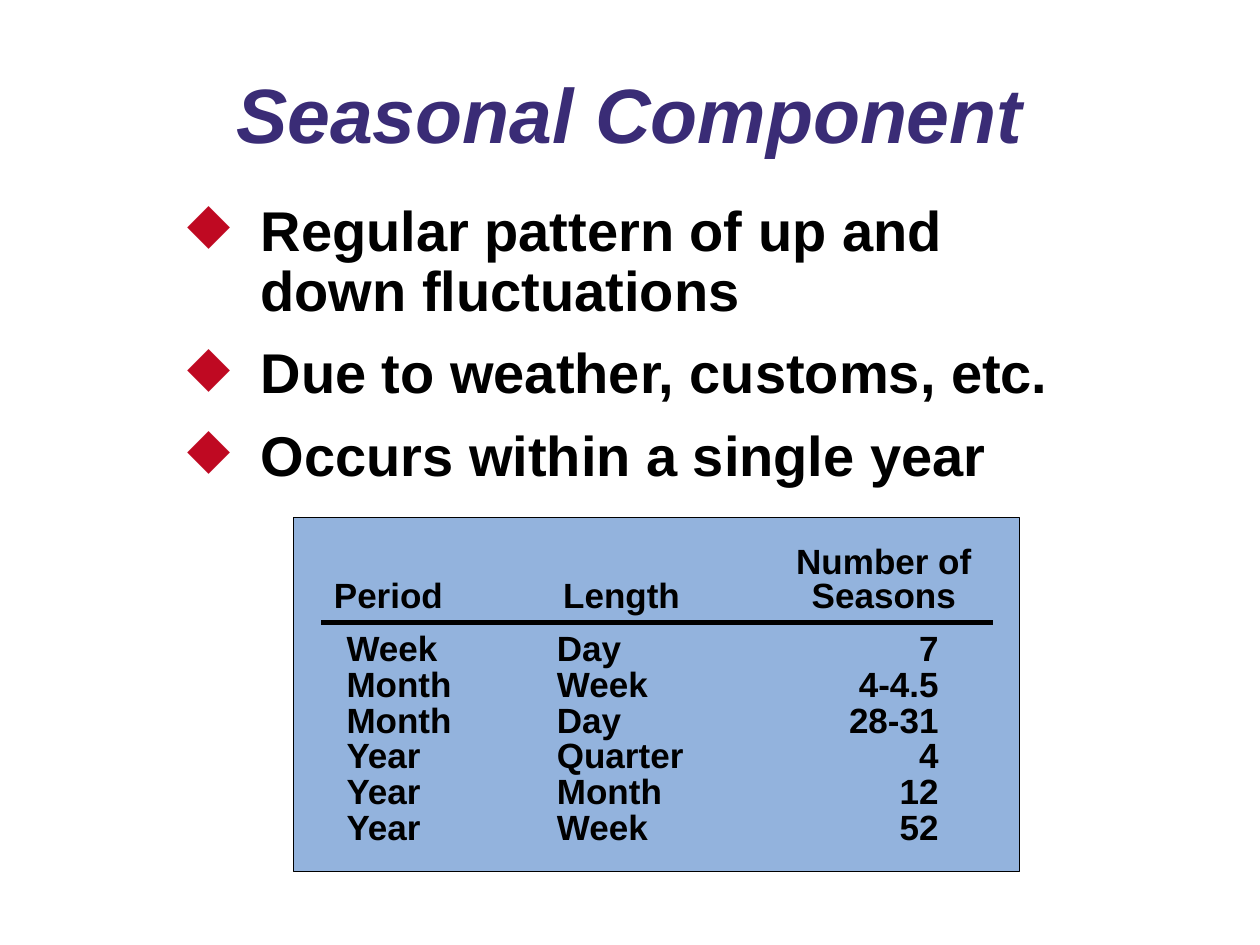
from dataclasses import dataclass

from lxml import etree
from pptx import Presentation
from pptx.dml.color import RGBColor
from pptx.enum import shapes, text
from pptx.oxml import ns
from pptx.util import Inches, Pt


@dataclass(frozen=True)
class Theme:
    font: str = "Arial"
    ink: str = "000000"
    title: str = "3A2C76"
    mark: str = "BF0922"
    panel: str = "93B3DD"
    title_size: int = 44
    body_size: int = 32
    table_size: int = 20


theme = Theme()


def style(para, size, color, spacing):
    para.font.name = theme.font
    para.font.size = Pt(size)
    para.font.bold = True
    para.font.color.rgb = RGBColor.from_string(color)
    para.line_spacing = spacing


def add(parent, tag, **attrs):
    return etree.SubElement(parent, ns.qn(tag), attrs)


deck = Presentation()
deck.slide_width, deck.slide_height = Inches(10), Inches(7.5)
slide = deck.slides.add_slide(deck.slide_layouts[5])

# Title
title = slide.shapes.title
title.left, title.top = Inches(0.75), Inches(0.4)
title.width, title.height = Inches(8.5), Inches(1.08)
title.text_frame.text = "Seasonal Component"
title.text_frame.vertical_anchor = text.MSO_ANCHOR.MIDDLE
para = title.text_frame.paragraphs[0]
para.alignment = text.PP_ALIGN.CENTER
para.font.italic = True
style(para, theme.title_size, theme.title, 0.9)

# Bullets
box = slide.shapes.add_textbox(Inches(1.39), Inches(1.56), Inches(7.25), Inches(2.67))
frame = box.text_frame
frame.word_wrap = True
frame.text = "\n".join([
    "Regular pattern of up and down fluctuations",
    "Due to weather, customs, etc.",
    "Occurs within a single year",
])
for para in frame.paragraphs:
    style(para, theme.body_size, theme.ink, 0.9)
    para.space_after = Pt(12.4)
    props = para._p.get_or_add_pPr()
    props.set("marL", str(Inches(0.58)))
    props.set("indent", str(-Inches(0.58)))
    # Bullet colour and sign come before the default run properties
    color = add(props, "a:buClr")
    add(color, "a:srgbClr", val=theme.mark)
    sign = add(props, "a:buChar", char="◆")
    runs = props.find(ns.qn("a:defRPr"))
    runs.addprevious(color)
    runs.addprevious(sign)

# Panel behind the table
panel = slide.shapes.add_shape(
    shapes.MSO_SHAPE.RECTANGLE, Inches(2.33), Inches(4.11), Inches(5.76), Inches(2.81))
panel.shadow.inherit = False
panel.fill.solid()
panel.fill.fore_color.rgb = RGBColor.from_string(theme.panel)
panel.line.color.rgb = RGBColor.from_string(theme.ink)
panel.line.width = Pt(0.75)

# Table of periods
rows = [
    ("Period", "Length", "Number of\nSeasons"),
    ("Week", "Day", "7"),
    ("Month", "Week", "4-4.5"),
    ("Month", "Day", "28-31"),
    ("Year", "Quarter", "4"),
    ("Year", "Month", "12"),
    ("Year", "Week", "52"),
]
widths = [1.77, 1.83, 1.73]
head, step = 0.72, 0.284
left, center, right = text.PP_ALIGN.LEFT, text.PP_ALIGN.CENTER, text.PP_ALIGN.RIGHT
# Alignment, left margin and right margin of each column
head_cols = [(left, 0.1, 0), (left, 0.15, 0), (center, 0, 0)]
body_cols = [(left, 0.2, 0), (left, 0.1, 0), (right, 0, 0.43)]

holder = slide.shapes.add_table(
    len(rows), len(widths), Inches(2.55), Inches(4.31),
    Inches(sum(widths)), Inches(head + step * (len(rows) - 1)))
table = holder.table
table.first_row = table.horz_banding = False
# Plain style without grid
table._tbl.tblPr.find(ns.qn("a:tableStyleId")).text = "{2D5ABB26-0587-4C30-8999-92F81FD0307C}"
for col, width in zip(table.columns, widths):
    col.width = Inches(width)

for r, row in enumerate(rows):
    table.rows[r].height = Inches(step if r else head)
    cols = body_cols if r else head_cols
    for c, (words, (align, start, end)) in enumerate(zip(row, cols)):
        cell = table.cell(r, c)
        cell.fill.background()
        cell.margin_left, cell.margin_right = Inches(start), Inches(end)
        cell.margin_top = 0
        cell.margin_bottom = Inches(0 if r else 0.15)
        cell.vertical_anchor = text.MSO_ANCHOR.MIDDLE if r else text.MSO_ANCHOR.BOTTOM
        cell.text = words
        for para in cell.text_frame.paragraphs:
            para.alignment = align
            style(para, theme.table_size, theme.ink, 0.85)

# Rule under the header
rule = slide.shapes.add_connector(
    shapes.MSO_CONNECTOR.STRAIGHT, Inches(2.55), Inches(4.94), Inches(7.88), Inches(4.94))
rule.line.color.rgb = RGBColor.from_string(theme.ink)
rule.line.width = Pt(3)
add(rule._element.spPr, "a:effectLst")

deck.save("out.pptx")
